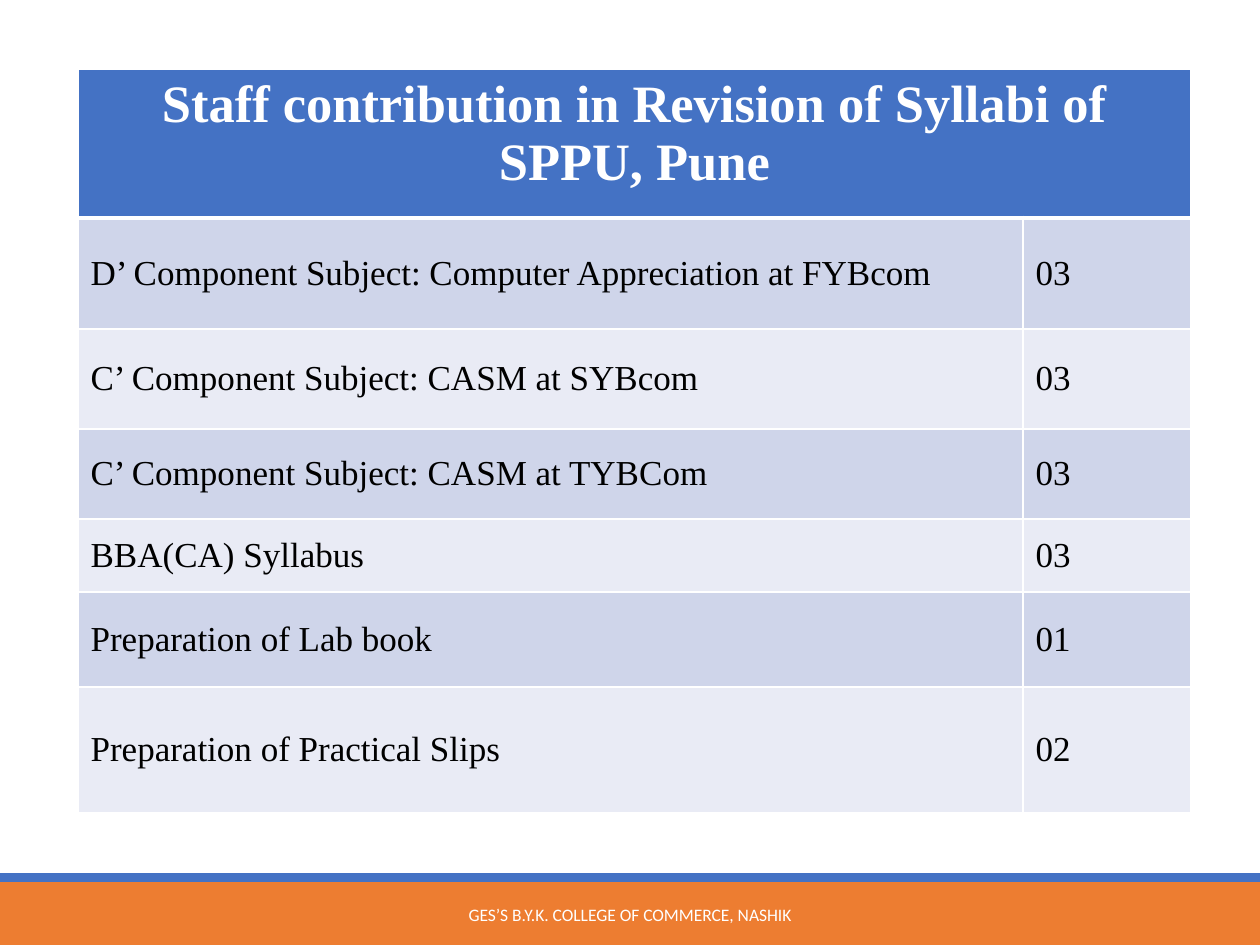
from lxml import etree
from pptx import Presentation
from pptx.dml.color import RGBColor
from pptx.enum.shapes import MSO_SHAPE
from pptx.enum.text import MSO_ANCHOR, PP_ALIGN
from pptx.oxml.ns import qn
from pptx.util import Inches, Pt

RECT = MSO_SHAPE.RECTANGLE
MIDDLE, TOP = MSO_ANCHOR.MIDDLE, MSO_ANCHOR.TOP
CENTER, LEFT = PP_ALIGN.CENTER, PP_ALIGN.LEFT
PX = Inches(1) / 126
COLORS = {
    "blue": "4472C4",
    "orange": "ED7D31",
    "band_dark": "CFD5EA",
    "band_light": "E9EBF5",
    "white": "FFFFFF",
    "black": "000000",
}
TITLE = "Staff contribution in Revision of Syllabi of SPPU, Pune"
FOOTER = "GES’S B.Y.K. COLLEGE OF COMMERCE, NASHIK"
CONTRIBUTIONS = [
    ("D’ Component Subject: Computer Appreciation at FYBcom", "03"),
    ("C’ Component Subject: CASM at SYBcom", "03"),
    ("C’ Component Subject: CASM at TYBCom", "03"),
    ("BBA(CA) Syllabus", "03"),
    ("Preparation of Lab book", "01"),
    ("Preparation of Practical Slips", "02"),
]
COL_WIDTHS = [945, 168]
ROW_HEIGHTS = [149, 111, 100, 90, 73, 95, 126]


def emu(*lengths):
    """Turn px lengths into EMU."""
    return [round(n * PX) for n in lengths]


def rgb(name):
    """Look up a named colour."""
    return RGBColor.from_string(COLORS[name])


def write(tf, text, font, size, color, align, bold=False):
    """Set one formatted paragraph in a text frame."""
    tf.text = text
    p = tf.paragraphs[0]
    p.alignment = align
    r = p.runs[0]
    r.font.name, r.font.size, r.font.bold = font, Pt(size), bold
    r.font.color.rgb = rgb(color)


def set_borders(cell, **widths):
    """Draw white cell borders with widths in points by side."""
    tcPr = cell._tc.get_or_add_tcPr()
    for side in "LRTB":
        ln = etree.SubElement(tcPr, qn(f"a:ln{side}"), w=str(Pt(widths.get(side, 1))))
        fill = etree.SubElement(ln, qn("a:solidFill"))
        etree.SubElement(fill, qn("a:srgbClr"), val=COLORS["white"])


def fill_cell(cell, color, **widths):
    """Give a cell its borders and fill."""
    set_borders(cell, **widths)
    cell.fill.solid()
    cell.fill.fore_color.rgb = rgb(color)


def add_contribution_table(s, x, y):
    """Place the table with its merged heading and banded rows."""
    box = emu(x, y, sum(COL_WIDTHS), sum(ROW_HEIGHTS))
    table = s.shapes.add_table(len(ROW_HEIGHTS), len(COL_WIDTHS), *box).table
    for column, width in zip(table.columns, emu(*COL_WIDTHS)):
        column.width = width
    for row, height in zip(table.rows, emu(*ROW_HEIGHTS)):
        row.height = height

    for cell in table.rows[0].cells:
        fill_cell(cell, "blue", B=3)
    heading = table.cell(0, 0)
    heading.merge(table.cell(0, 1))
    heading.vertical_anchor = TOP
    write(heading.text_frame, TITLE, "Times New Roman", 30, "white", CENTER, True)

    for i, values in enumerate(CONTRIBUTIONS, 1):
        band = "band_dark" if i % 2 else "band_light"
        for cell, value in zip(table.rows[i].cells, values):
            fill_cell(cell, band, T=3 if i == 1 else 1)
            cell.vertical_anchor = MIDDLE
            write(cell.text_frame, value, "Times New Roman", 20, "black", LEFT)


def add_bar(s, x, y, w, h, color):
    """Place a plain filled bar."""
    sp = s.shapes.add_shape(RECT, *emu(x, y, w, h))
    sp.shadow.inherit = False
    sp.fill.solid()
    sp.fill.fore_color.rgb = rgb(color)
    sp.line.fill.background()


def add_footer(s, x, y, w, h):
    """Place the two footer bars and the centred college name."""
    stripe = 9
    add_bar(s, x, y + stripe, w, h - stripe, "orange")
    add_bar(s, x, y, w, stripe, "blue")
    text_w, text_h = 500, 50
    sp = s.shapes.add_textbox(*emu(x + (w - text_w) / 2, y + 17, text_w, text_h))
    tf = sp.text_frame
    tf.word_wrap = True
    tf.vertical_anchor = MIDDLE
    write(tf, FOOTER, "Calibri", 10, "white", CENTER)


def main():
    """Build and save the slide."""
    prs = Presentation()
    prs.slide_width, prs.slide_height = emu(1260, 945)
    s = prs.slides.add_slide(prs.slide_layouts[6])
    add_footer(s, 0, 873, 1260, 72)
    add_contribution_table(s, 78, 69)
    prs.save("out.pptx")


if __name__ == "__main__":
    main()
